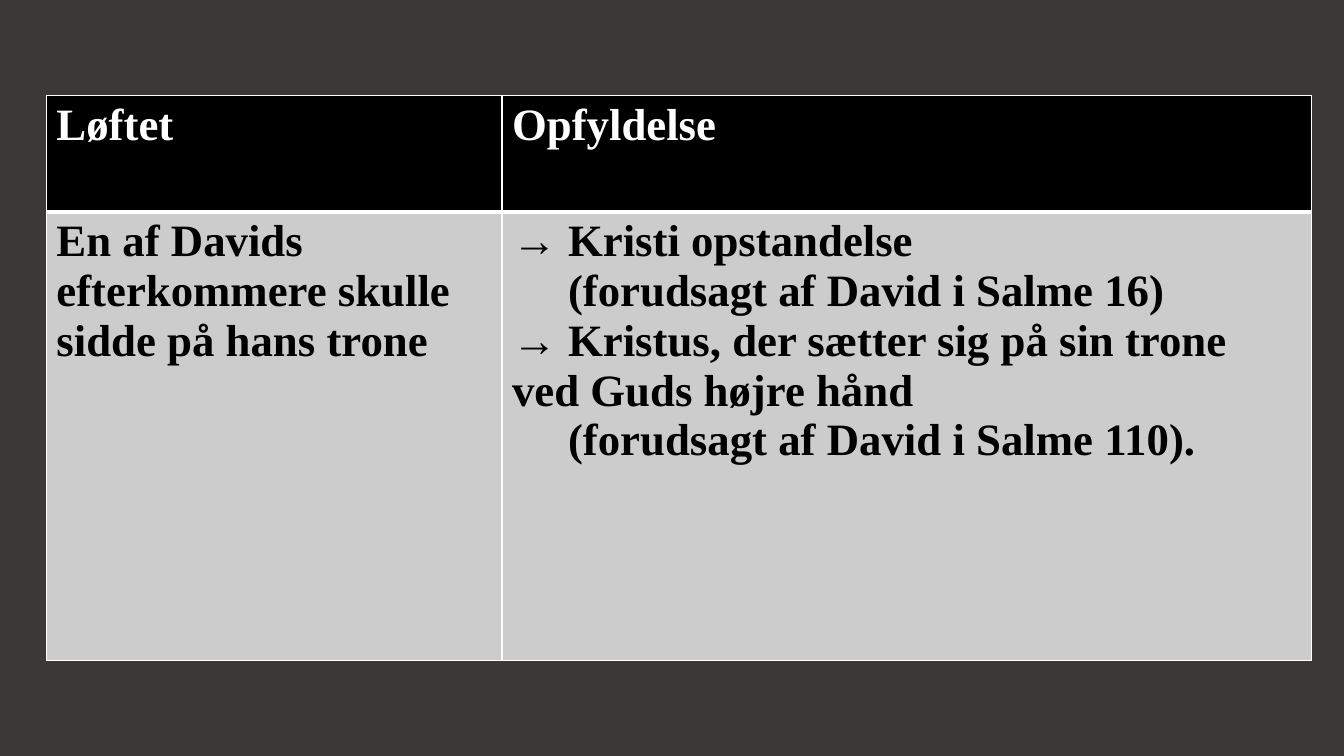
from lxml import etree
from pptx import Presentation
from pptx.dml.color import RGBColor
from pptx.oxml.ns import qn
from pptx.util import Pt

WHITE = RGBColor(0xFF, 0xFF, 0xFF)
BLACK = RGBColor(0, 0, 0)
GREY = RGBColor(0xCC, 0xCC, 0xCC)
DARK = RGBColor(0x3B, 0x38, 0x38)
THIN, THICK = 1, 3
HANGING = 40


def add_text(p, text, font="Times New Roman", size=32, color=BLACK, bold=True):
    r = p.add_run()
    r.text = text
    r.font.name = font
    r.font.size = Pt(size)
    r.font.bold = bold
    r.font.color.rgb = color


class Deck:
    def __init__(self, width, height, background):
        self.prs = Presentation()
        self.prs.slide_width, self.prs.slide_height = Pt(width), Pt(height)
        self.s = self.prs.slides.add_slide(self.prs.slide_layouts[6])
        self.s.background.fill.solid()
        self.s.background.fill.fore_color.rgb = background

    def table(self, left, top, widths, heights):
        table = self.s.shapes.add_table(
            len(heights), len(widths), Pt(left), Pt(top),
            Pt(sum(widths)), Pt(sum(heights))).table
        for column, width in zip(table.columns, widths):
            column.width = Pt(width)
        for row, height in zip(table.rows, heights):
            row.height = Pt(height)
        return table

    def cell(self, cell, paragraphs, fill, color, top=THIN, bottom=THIN):
        cell.fill.solid()
        cell.fill.fore_color.rgb = fill
        self.borders(cell, L=THIN, R=THIN, T=top, B=bottom)
        tf = cell.text_frame
        for i, (indent, runs) in enumerate(paragraphs):
            p = tf.add_paragraph() if i else tf.paragraphs[0]
            if indent:
                p._p.get_or_add_pPr().set("marL", str(Pt(indent)))
            for text, bold in runs:
                add_text(p, text, color=color, bold=bold)

    def borders(self, cell, **widths):
        tcPr = cell._tc.get_or_add_tcPr()
        for i, (side, width) in enumerate(widths.items()):
            ln = etree.Element(qn("a:ln" + side), w=str(Pt(width)))
            fill = etree.SubElement(ln, qn("a:solidFill"))
            etree.SubElement(fill, qn("a:srgbClr"), val=str(WHITE))
            tcPr.insert(i, ln)


def main():
    deck = Deck(960, 540, DARK)
    table = deck.table(33.12, 68.4, [325.44, 578.16], [82.8, 320.4])

    for col, heading in enumerate(["Løftet", "Opfyldelse"]):
        deck.cell(table.cell(0, col), [(0, [(heading, True)])],
                  BLACK, WHITE, bottom=THICK)

    promise = [(0, [("En af Davids efterkommere skulle sidde på hans trone", True)])]
    fulfilment = [
        (0, [("→ ", False), ("Kristi opstandelse", True)]),
        (HANGING, [("(forudsagt af David i Salme 16)", True)]),
        (0, [("→ Kristus, der sætter sig på sin trone ved Guds højre hånd", True)]),
        (HANGING, [("(forudsagt af David i Salme 110).", True)]),
    ]
    for col, paragraphs in enumerate([promise, fulfilment]):
        deck.cell(table.cell(1, col), paragraphs, GREY, BLACK, top=THICK)

    deck.prs.save("out.pptx")


if __name__ == "__main__":
    main()
